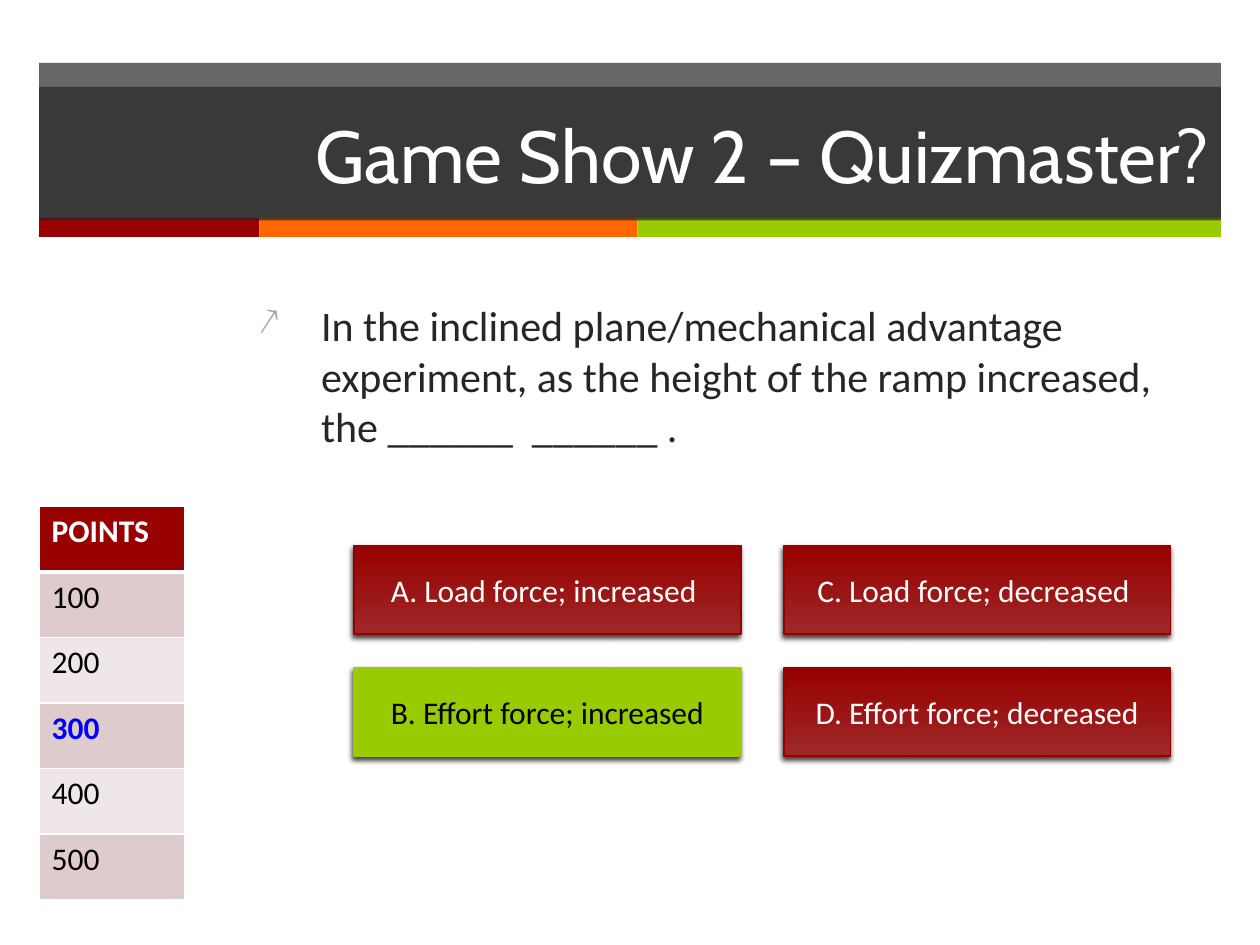
import dataclasses

import lxml.etree
import pptx
import pptx.dml.color
import pptx.enum.shapes
import pptx.enum.text
import pptx.oxml.ns
import pptx.util

RGB = pptx.dml.color.RGBColor.from_string
IN = pptx.util.Inches
PT = pptx.util.Pt
QN = pptx.oxml.ns.qn
ALIGN = pptx.enum.text.PP_ALIGN
ANCHOR = pptx.enum.text.MSO_ANCHOR


@dataclasses.dataclass(frozen=True)
class Theme:
    heading: str = "Cabin"
    body: str = "Calibri"
    title_size: int = 42
    question_size: int = 24
    label_size: int = 18
    white: str = "FFFFFF"
    black: str = "000000"
    dark: str = "262626"
    bullet: str = "A6A6A6"
    red: str = "990000"
    red_light: str = "9D2828"
    red_line: str = "960000"
    orange: str = "FF6600"
    green: str = "99CC00"
    current: str = "0000FF"
    bands: tuple = ("DECCCC", "EFE7E7")


THEME = Theme()


def add_xml(parent, tag, **attrs):
    return lxml.etree.SubElement(parent, QN(tag), attrs)


def add_rect(slide, box, color, alpha=None):
    """Add a plain rectangle; alpha is its opacity in percent."""
    sp = slide.shapes.add_shape(pptx.enum.shapes.MSO_SHAPE.RECTANGLE, *map(IN, box))
    sp.shadow.inherit = False
    sp.line.fill.background()
    sp.fill.solid()
    sp.fill.fore_color.rgb = RGB(color)
    if alpha:
        clr = sp._element.spPr.find(QN("a:solidFill"))[0]
        add_xml(clr, "a:alpha", val=str(alpha * 1000))
    return sp


def write(tf, text, size, color, font=THEME.body, align=ALIGN.LEFT, bold=False):
    tf.word_wrap = True
    p = tf.paragraphs[0]
    p.text = text
    p.alignment = align
    f = p.runs[0].font
    f.name, f.size, f.bold = font, PT(size), bold
    f.color.rgb = RGB(color)
    return p


def add_header(slide, box, title):
    left, top, width, height = box
    stripe = 0.15
    add_rect(slide, (left, top, width, height - stripe), THEME.dark, 70)
    x = left
    for color, w in ((THEME.red, 1.75), (THEME.orange, 3), (THEME.green, width - 4.75)):
        add_rect(slide, (x, top + height - stripe, w, stripe), color)
        x += w
    sp = add_rect(slide, (left, top + 0.19, width, 1.06), THEME.dark, 70)
    sp.text_frame.vertical_anchor = ANCHOR.MIDDLE
    write(sp.text_frame, title, THEME.title_size, THEME.white, THEME.heading, ALIGN.RIGHT)


def add_question(slide, box, text):
    tf = slide.shapes.add_textbox(*map(IN, box)).text_frame
    p = write(tf, text, THEME.question_size, THEME.dark)
    pPr = p._p.get_or_add_pPr()
    pPr.set("marL", str(IN(0.5)))
    pPr.set("indent", str(IN(-0.5)))
    add_xml(add_xml(pPr, "a:buClr"), "a:srgbClr", val=THEME.bullet)
    add_xml(pPr, "a:buSzPct", val="90000")
    add_xml(pPr, "a:buChar", char="↗")


def set_borders(cell, bottom):
    tcPr = cell._tc.get_or_add_tcPr()
    for i, side in enumerate("LRTB"):
        width = bottom if side == "B" else 1
        ln = lxml.etree.Element(QN(f"a:ln{side}"), w=str(PT(width)))
        add_xml(add_xml(ln, "a:solidFill"), "a:srgbClr", val=THEME.white)
        tcPr.insert(i, ln)


def add_points(slide, box, header, points, current):
    rows = [header, *points]
    table = slide.shapes.add_table(len(rows), 1, *map(IN, box)).table
    table.horz_banding = False
    for i, text in enumerate(rows):
        table.rows[i].height = IN(box[3] / len(rows))
        cell = table.cell(i, 0)
        fill, color = THEME.bands[(i - 1) % 2], THEME.black
        if i == 0:
            fill, color = THEME.red, THEME.white
        elif text == current:
            color = THEME.current
        cell.fill.solid()
        cell.fill.fore_color.rgb = RGB(fill)
        write(cell.text_frame, text, THEME.label_size, color, bold=text in (header, current))
        set_borders(cell, 3 if i == 0 else 1)


def add_answer(slide, box, text, correct):
    sp = add_rect(slide, box, THEME.green)
    if not correct:
        sp.fill.gradient()
        sp.fill.gradient_angle = 90
        for stop, color in zip(sp.fill.gradient_stops, (THEME.red_light, THEME.red)):
            stop.color.rgb = RGB(color)
    sp.line.color.rgb = RGB(THEME.green if correct else THEME.red_line)
    sp.line.width = PT(1)
    shadow = add_xml(sp._element.spPr.find(QN("a:effectLst")), "a:outerShdw",
                     blurRad=str(PT(3)), dist=str(PT(2)), dir=str(110 * 60000), rotWithShape="0")
    add_xml(add_xml(shadow, "a:srgbClr", val=THEME.black), "a:alpha", val="75000")
    sp.text_frame.vertical_anchor = ANCHOR.MIDDLE
    write(sp.text_frame, text, THEME.label_size,
          THEME.black if correct else THEME.white, align=ALIGN.CENTER)


def add_answers(slide, box, answers, correct):
    """Fill a two by two grid column by column."""
    left, top, width, height = box
    w, h = 3.07, 0.7
    for i, text in enumerate(answers):
        col, row = divmod(i, 2)
        cell = (left + col * (width - w), top + row * (height - h), w, h)
        add_answer(slide, cell, text, i == correct)


def main():
    prs = pptx.Presentation()
    prs.slide_width, prs.slide_height = IN(10), IN(7.5)
    slide = prs.slides.add_slide(prs.slide_layouts[6])
    add_header(slide, (0.31, 0.5, 9.38, 1.38), "Game Show 2 – Quizmaster?")
    add_question(slide, (1.95, 2.33, 7.74, 1.33),
                 "In the inclined plane/mechanical advantage experiment, "
                 "as the height of the ramp increased, the ______  ______ .")
    add_points(slide, (0.31, 4.02, 1.16, 3.12), "POINTS",
               ["100", "200", "300", "400", "500"], current="300")
    add_answers(slide, (2.81, 4.33, 6.48, 1.67),
                ["A. Load force; increased ", "B. Effort force; increased",
                 "C. Load force; decreased ", "D. Effort force; decreased"], correct=1)
    prs.save("out.pptx")


if __name__ == "__main__":
    main()
